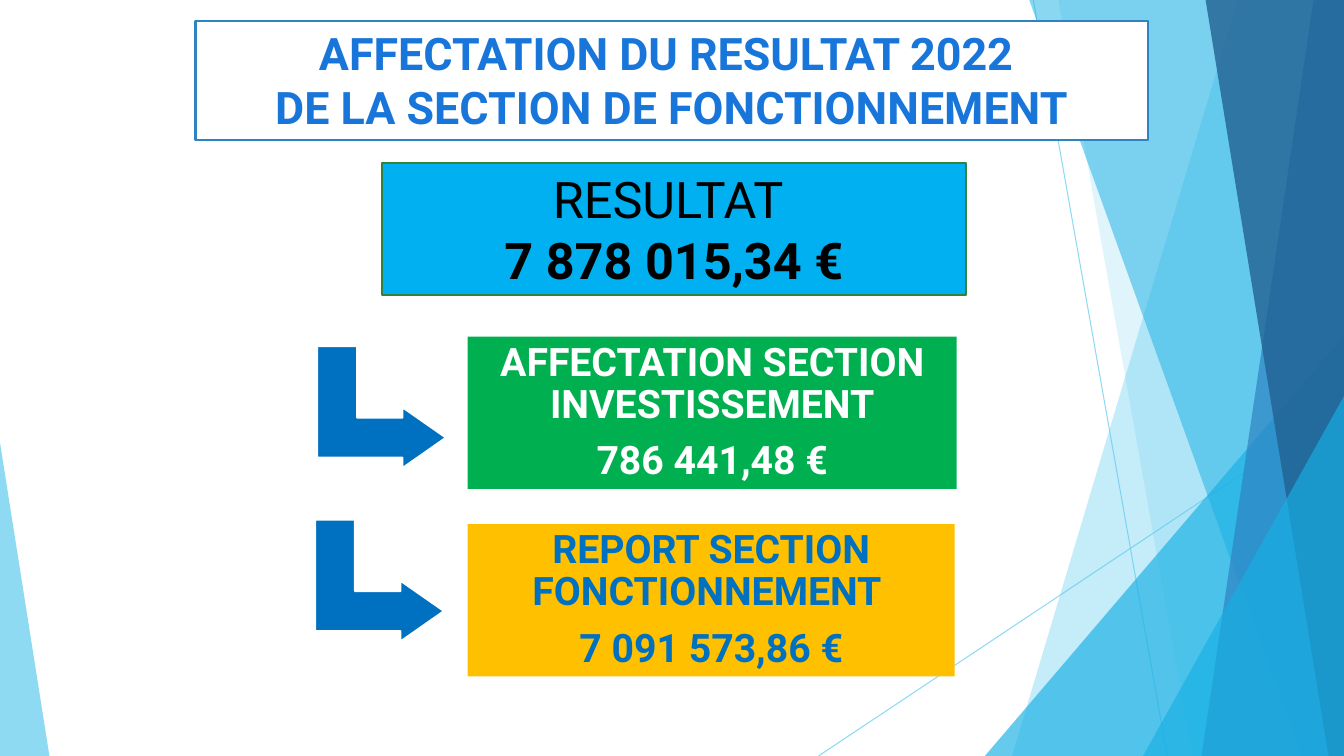
"""Build the slide on the allocation of the 2022 operating result."""
import pptx
import pptx.util
import pptx.dml.color
import pptx.enum.shapes
import pptx.enum.text
import pptx.oxml.ns
import lxml.etree

FONT = "Roboto"
COLORS = {
    "white": "FFFFFF", "black": "000000", "sky": "5FCBEF", "cyan": "17B0E4",
    "steel": "2E83C3", "navy": "226292", "title": "1876DB", "result": "00B0F0",
    "forest": "31823C", "green": "00B050", "gold": "FFC000", "blue": "0070C0",
}

# Positions and sizes are percentages of the slide's width and height.
RAYS = [((76.88, 0), (86.85, 100)), ((100, 53.73), (60.9, 100))]
BANDS_AND_PEAKS = [
    ("band", (92.1, 75.3), "sky", 36),
    ("band", (78.75, 88.73), "sky", 20),
    ("peak", (73.28, 44.4, 26.72, 55.6, 1), "cyan", 66),
    ("band", (76.58, 96.83), "cyan", 50),
    ("band", (97.73, 89.4), "steel", 70),
    ("band", (89.7, 98.85), "navy", 80),
    ("peak", (85.05, 52.4, 14.95, 47.6, 1), "cyan", 66),
    ("peak", (0, 58.53, 3.68, 41.47, 0), "sky", 70),
]
HEADINGS = [
    {"at": (14.55, 2.8, 70.88, 15.73), "fill": "white", "line": "steel",
     "color": "title", "size": 32,
     "lines": [("AFFECTATION DU RESULTAT 2022 ", True),
               ("DE LA SECTION DE FONCTIONNEMENT", True)]},
    {"at": (28.43, 21.6, 43.43, 17.47), "fill": "result", "line": "forest",
     "color": "black", "size": 36,
     "lines": [("RESULTAT ", False), ("7 878 015,34 €", True)]},
]
ALLOCATIONS = [
    {"at": (34.8, 44.53, 36.38, 20.13), "fill": "green", "color": "white",
     "size": 28, "lines": [("AFFECTATION SECTION INVESTISSEMENT", True),
                           ("786 441,48 €", True)]},
    {"at": (34.8, 69.33, 36.23, 20.13), "fill": "gold", "color": "blue",
     "size": 28, "lines": [("REPORT SECTION FONCTIONNEMENT ", True),
                           ("7 091 573,86 €", True)]},
]
ARROW_SIZE = (9.08, 17.07)
ARROW_CORNERS = [(23.85, 45.33), (23.7, 68.27)]
ARROW_ADJUSTMENTS = (0.328, 0.25, 0.358)

PRESET = pptx.enum.shapes.MSO_SHAPE
deck = pptx.Presentation()
deck.slide_width = pptx.util.Inches(13.33)
deck.slide_height = pptx.util.Inches(7.5)
slide = deck.slides.add_slide(deck.slide_layouts[6])


def across(share):
    return round(deck.slide_width * share / 100)


def down(share):
    return round(deck.slide_height * share / 100)


def rgb(name):
    return pptx.dml.color.RGBColor.from_string(COLORS[name])


def set_opacity(element, percent):
    for color in element.iter(pptx.oxml.ns.qn("a:srgbClr")):
        alpha = lxml.etree.SubElement(color, pptx.oxml.ns.qn("a:alpha"))
        alpha.set("val", str(percent * 1000))


def paint(shape, fill, line=None):
    shape.shadow.inherit = False
    shape.fill.solid()
    shape.fill.fore_color.rgb = rgb(fill)
    if line:
        shape.line.color.rgb = rgb(line)
        shape.line.width = pptx.util.Pt(1.5)
    else:
        shape.line.fill.background()


def add_preset(preset, left, top, width, height):
    return slide.shapes.add_shape(
        preset, across(left), down(top), across(width), down(height))


def add_ray(start, end):
    ray = slide.shapes.add_connector(
        pptx.enum.shapes.MSO_CONNECTOR.STRAIGHT,
        across(start[0]), down(start[1]), across(end[0]), down(end[1]))
    ray.line.color.rgb = rgb("sky")
    ray.line.width = pptx.util.Pt(0.75)
    properties = ray._element.spPr
    set_opacity(properties, 70)
    lxml.etree.SubElement(properties, pptx.oxml.ns.qn("a:effectLst"))


def add_band(top_left, bottom_left):
    outline = slide.shapes.build_freeform(across(top_left), 0)
    outline.add_line_segments([
        (across(100), 0), (across(100), down(100)), (across(bottom_left), down(100))])
    return outline.convert_to_shape()


def add_peak(left, top, width, height, apex):
    peak = add_preset(PRESET.ISOSCELES_TRIANGLE, left, top, width, height)
    peak.adjustments[0] = apex
    return peak


def add_box(content, allocation):
    box = add_preset(PRESET.RECTANGLE, *content["at"])
    paint(box, content["fill"], content.get("line"))
    frame = box.text_frame
    frame.word_wrap = True
    frame.vertical_anchor = pptx.enum.text.MSO_ANCHOR.TOP
    if allocation:
        frame.vertical_anchor = pptx.enum.text.MSO_ANCHOR.MIDDLE
        inset = pptx.util.Inches(0.07)
        frame.margin_left = frame.margin_right = inset
        frame.margin_top = frame.margin_bottom = inset
    for index, (text, bold) in enumerate(content["lines"]):
        paragraph = frame.add_paragraph() if index else frame.paragraphs[0]
        paragraph.text = text
        paragraph.alignment = pptx.enum.text.PP_ALIGN.CENTER
        paragraph.font.name = FONT
        paragraph.font.size = pptx.util.Pt(content["size"])
        paragraph.font.bold = bold
        paragraph.font.color.rgb = rgb(content["color"])
        if allocation:
            paragraph.line_spacing = 0.9
            paragraph.space_after = pptx.util.Pt(10)


def add_arrow(corner):
    arrow = add_preset(PRESET.BENT_UP_ARROW, *corner, *ARROW_SIZE)
    arrow.rotation = 90
    for index, value in enumerate(ARROW_ADJUSTMENTS):
        arrow.adjustments[index] = value
    paint(arrow, "blue", "white")


for ray_ends in RAYS:
    add_ray(*ray_ends)
for kind, geometry, color, opacity in BANDS_AND_PEAKS:
    facet = add_band(*geometry) if kind == "band" else add_peak(*geometry)
    paint(facet, color)
    set_opacity(facet._element.spPr, opacity)
for heading in HEADINGS:
    add_box(heading, allocation=False)
for arrow_corner in ARROW_CORNERS:
    add_arrow(arrow_corner)
for allocation_box in ALLOCATIONS:
    add_box(allocation_box, allocation=True)

deck.save("out.pptx")
